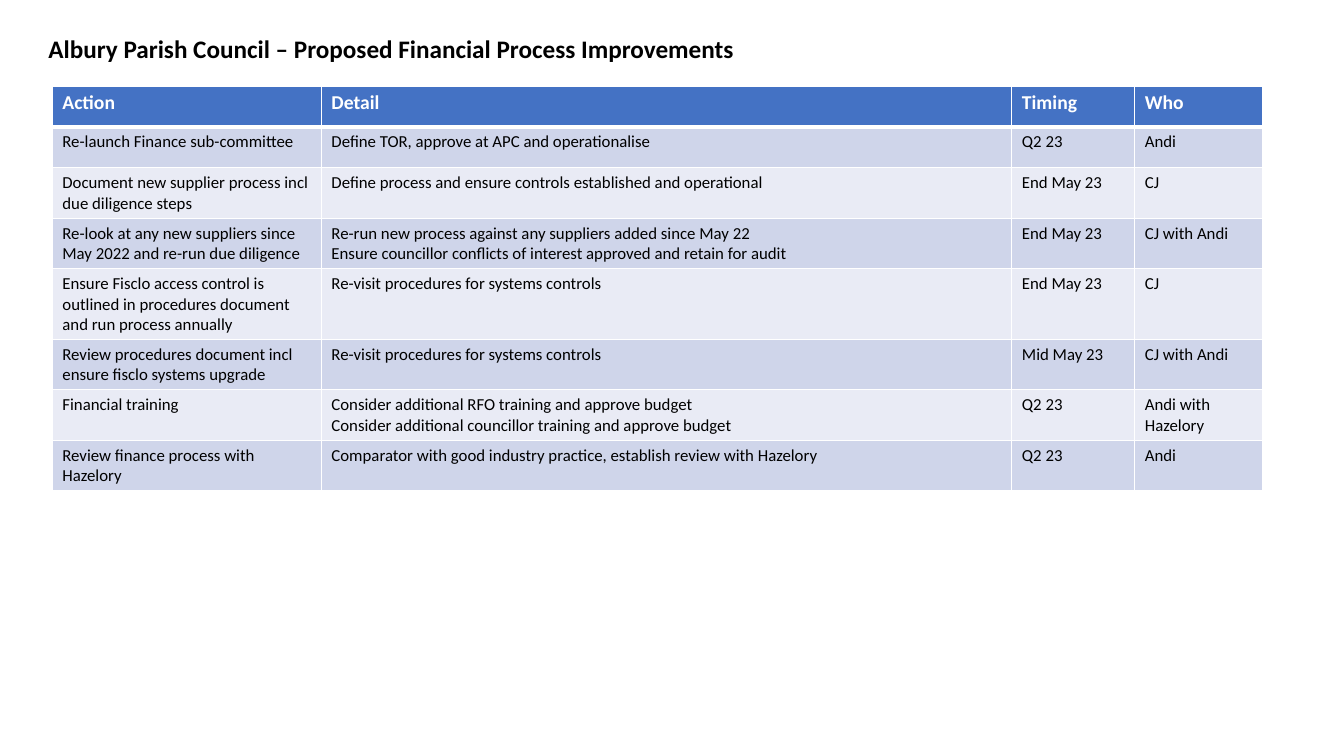
"""Build a one-slide table of proposed financial process improvements."""
import pptx
import pptx.dml.color
import pptx.enum.text
import pptx.oxml.ns
import pptx.util
from dataclasses import dataclass
from lxml import etree

HEADING = "Albury Parish Council – Proposed Financial Process Improvements"
COLUMNS = [("Action", 192.2), ("Detail", 493.2), ("Timing", 87.8), ("Who", 91.4)]
ACTIONS = [
    ("Re-launch Finance sub-committee",
     "Define TOR, approve at APC and operationalise", "Q2 23", "Andi"),
    ("Document new supplier process incl due diligence steps",
     "Define process and ensure controls established and operational", "End May 23", "CJ"),
    ("Re-look at any new suppliers since May 2022 and re-run due diligence",
     "Re-run new process against any suppliers added since May 22\n"
     "Ensure councillor conflicts of interest approved and retain for audit",
     "End May 23", "CJ with Andi"),
    ("Ensure Fisclo access control is outlined in procedures document and run process annually",
     "Re-visit procedures for systems controls", "End May 23", "CJ"),
    ("Review procedures document incl ensure fisclo systems upgrade",
     "Re-visit procedures for systems controls", "Mid May 23", "CJ with Andi"),
    ("Financial training",
     "Consider additional RFO training and approve budget\n"
     "Consider additional councillor training and approve budget",
     "Q2 23", "Andi with Hazelory"),
    ("Review finance process with Hazelory",
     "Comparator with good industry practice, establish review with Hazelory", "Q2 23", "Andi"),
]


@dataclass(frozen=True)
class Theme:
    font: str = "Calibri"
    ink: str = "000000"
    white: str = "FFFFFF"
    header: str = "4472C4"
    bands: tuple = ("CFD5EA", "E9EBF5")
    heading_size: float = 18
    header_size: float = 14
    body_size: float = 12
    rule: float = 1
    header_rule: float = 3


THEME = Theme()
Pt = pptx.util.Pt
qn = pptx.oxml.ns.qn
ROW_HEIGHT = 29.2


def style(paragraph, size, colour, bold):
    font = paragraph.font
    font.name, font.size, font.bold = THEME.font, Pt(size), bold
    font.color.rgb = pptx.dml.color.RGBColor.from_string(colour)


def add_borders(cell, top, bottom):
    properties = cell._tc.get_or_add_tcPr()
    for side, width in (("L", THEME.rule), ("R", THEME.rule), ("T", top), ("B", bottom)):
        line = etree.SubElement(properties, qn(f"a:ln{side}"), w=str(int(Pt(width))))
        fill = etree.SubElement(line, qn("a:solidFill"))
        etree.SubElement(fill, qn("a:srgbClr"), val=THEME.white)


def add_heading(slide):
    heading = slide.shapes.title
    heading.left, heading.top, heading.width, heading.height = map(Pt, (27.4, 20.2, 507.6, 28.8))
    frame = heading.text_frame
    frame.text = HEADING
    frame.word_wrap = False
    frame.auto_size = pptx.enum.text.MSO_AUTO_SIZE.SHAPE_TO_FIT_TEXT
    frame.vertical_anchor = pptx.enum.text.MSO_ANCHOR.TOP
    frame.paragraphs[0].alignment = pptx.enum.text.PP_ALIGN.LEFT
    style(frame.paragraphs[0], THEME.heading_size, THEME.ink, True)


def add_actions(slide):
    rows = [[name for name, _ in COLUMNS], *ACTIONS]
    total_width = sum(width for _, width in COLUMNS)
    table = slide.shapes.add_table(len(rows), len(COLUMNS), Pt(37.4), Pt(61.5),
                                   Pt(total_width), Pt(ROW_HEIGHT * len(rows))).table
    for column, (_, width) in zip(table.columns, COLUMNS):
        column.width = Pt(width)
    for r, entries in enumerate(rows):
        if r == 0:
            fill, size, colour = THEME.header, THEME.header_size, THEME.white
        else:
            fill, size, colour = THEME.bands[(r - 1) % 2], THEME.body_size, THEME.ink
        top = THEME.header_rule if r == 1 else THEME.rule
        bottom = THEME.header_rule if r == 0 else THEME.rule
        for c, entry in enumerate(entries):
            cell = table.cell(r, c)
            add_borders(cell, top, bottom)
            cell.fill.solid()
            cell.fill.fore_color.rgb = pptx.dml.color.RGBColor.from_string(fill)
            cell.text = entry
            for paragraph in cell.text_frame.paragraphs:
                style(paragraph, size, colour, r == 0)


def main():
    deck = pptx.Presentation()
    deck.slide_width, deck.slide_height = Pt(960), Pt(540)
    slide = deck.slides.add_slide(deck.slide_layouts.get_by_name("Title Only"))
    add_heading(slide)
    add_actions(slide)
    deck.save("out.pptx")


if __name__ == "__main__":
    main()
